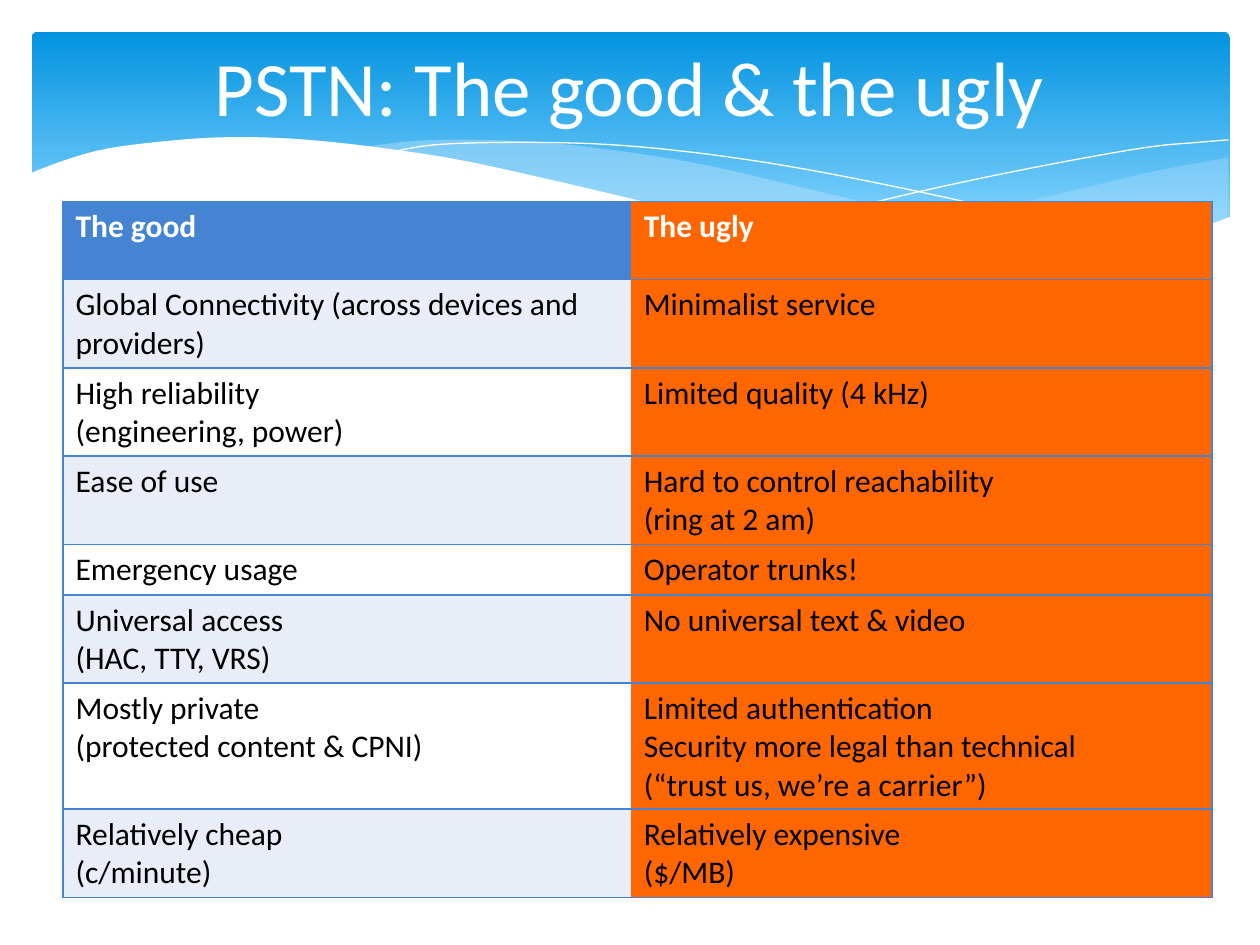
from lxml import etree
from pptx import Presentation
from pptx.dml.color import RGBColor
from pptx.enum.shapes import MSO_SHAPE
from pptx.enum.text import MSO_ANCHOR, PP_ALIGN
from pptx.oxml.ns import qn
from pptx.util import Inches, Pt

ROUND = MSO_SHAPE.ROUNDED_RECTANGLE
MIDDLE = MSO_ANCHOR.MIDDLE
CENTER = PP_ALIGN.CENTER
WHITE = RGBColor(0xFF, 0xFF, 0xFF)
BLACK = RGBColor(0x00, 0x00, 0x00)
DEEP = RGBColor(0x02, 0x93, 0xE0)
SKY = RGBColor(0x83, 0xD3, 0xFE)
MIST = RGBColor(0xC6, 0xE7, 0xFC)
BLUE = RGBColor(0x45, 0x84, 0xD3)
PALE = RGBColor(0xE9, 0xED, 0xF7)
ORANGE = RGBColor(0xFF, 0x66, 0x00)

TITLE = {"name": "Calibri", "size": Pt(44), "bold": False}
HEAD = {"name": "Calibri", "size": Pt(18), "bold": True}
BODY = {"name": "Calibri", "size": Pt(18), "bold": False}

# Each wave is a list of edges in inches from the banner's top left corner.
RIGHT = [
    [(9.5, 1), (8.96, 1.1), (8.36, 1.24), (7.54, 1.43), (6.81, 1.58), (6.36, 1.66)],
    [(6.36, 1.66), (7.07, 1.74), (7.67, 1.78), (8.19, 1.77), (8.64, 1.72),
     (9.1, 1.62), (9.5, 1.48)],
]
BROAD = [
    [(8.68, 1.73), (8.12, 1.65), (7.16, 1.48), (6.04, 1.22), (5.44, 1.08),
     (4.89, 0.98), (4.17, 0.89), (3.55, 0.86), (3.03, 0.87), (2.61, 0.92)],
    [(2.61, 0.92), (3.37, 1.03), (4.24, 1.22), (5.41, 1.49), (6.25, 1.64),
     (6.97, 1.74), (7.6, 1.78), (8.13, 1.78), (8.68, 1.73)],
]
FALL = [[(2.84, 0.96), (3.19, 0.9), (3.76, 0.88), (4.44, 0.89), (5.08, 0.94),
         (5.83, 1.04), (6.7, 1.2), (7.7, 1.42), (8.82, 1.72)]]
RISE = [[(5.88, 1.57), (6.47, 1.41), (7.23, 1.23), (8.11, 1.05), (8.85, 0.92),
         (9.26, 0.88), (9.5, 0.86)]]
FRONT = [
    [(9.52, 1.47), (9.05, 1.63), (8.5, 1.73), (7.84, 1.77), (7.01, 1.73),
     (6.23, 1.62), (5.3, 1.45), (4.22, 1.2), (3.4, 1.02), (2.67, 0.91),
     (2.05, 0.85), (1.52, 0.84), (1.07, 0.87), (0.6, 0.93), (0.27, 1.02), (-0.02, 1.13)],
    [(-0.02, 2.3), (9.52, 2.3)],
]

ROWS = [
    ("The good", "The ugly"),
    ("Global Connectivity (across devices and providers)", "Minimalist service"),
    ("High reliability\n(engineering, power)", "Limited quality (4 kHz)"),
    ("Ease of use", "Hard to control reachability\n(ring at 2 am)"),
    ("Emergency usage", "Operator trunks!"),
    ("Universal access\v(HAC, TTY, VRS)", "No universal text & video"),
    ("Mostly private\n(protected content & CPNI)",
     "Limited authentication\nSecurity more legal than technical\n"
     "(“trust us, we’re a carrier”)"),
    ("Relatively cheap\n(c/minute)", "Relatively expensive\n($/MB)"),
]
LINES = [2, 2, 2, 1, 2, 3, 2]


def write(frame, text, style, color, align=None):
    frame.text = text
    for par in frame.paragraphs:
        par.alignment = align
        for run in par.runs:
            for key, value in style.items():
                setattr(run.font, key, value)
            run.font.color.rgb = color


def smooth(knots, steps=5):
    """Return points on a Catmull-Rom curve through the knots."""
    if len(knots) < 3:
        return knots
    ext = [knots[0], *knots, knots[-1]]
    points = [knots[0]]
    for a, b, c, d in zip(ext, ext[1:], ext[2:], ext[3:]):
        for step in range(1, steps + 1):
            t = step / steps
            points.append(tuple(
                q + t * (r - p) / 2 + t * t * (2 * p - 5 * q + 4 * r - s) / 2
                + t ** 3 * (3 * q - p - 3 * r + s) / 2
                for p, q, r, s in zip(a, b, c, d)))
    return points


def wave(slide, left, top, edges, fill=None, alpha=100):
    """Draw a filled wave, or a white hairline when there is no fill."""
    points = [(left + Inches(x), top + Inches(y))
              for edge in edges for x, y in smooth(edge)]
    pen = slide.shapes.build_freeform(*points[0])
    pen.add_line_segments(points[1:], close=fill is not None)
    shape = pen.convert_to_shape()
    shape.shadow.inherit = False
    if fill is None:
        shape.fill.background()
        shape.line.color.rgb = WHITE
        shape.line.width = Pt(0)
        return
    shape.fill.solid()
    shape.fill.fore_color.rgb = fill
    shape.line.fill.background()
    if alpha < 100:
        color = shape.fill._xPr.find(".//" + qn("a:srgbClr"))
        etree.SubElement(color, qn("a:alpha"), val=str(alpha * 1000))


def banner(slide, left, top, width, height):
    card = slide.shapes.add_shape(ROUND, left, top, width, height)
    card.adjustments[0] = 0.03
    card.shadow.inherit = False
    card.line.fill.background()
    card.fill.gradient()
    card.fill.gradient_angle = 270
    for stop, color, place in zip(card.fill.gradient_stops, (DEEP, SKY), (0, 0.9)):
        stop.color.rgb = color
        stop.position = place
    wave(slide, left, top, RIGHT, MIST, 29)
    wave(slide, left, top, BROAD, MIST, 40)
    wave(slide, left, top, FALL)
    wave(slide, left, top, RISE)
    wave(slide, left, top, FRONT, WHITE)


def title(slide, left, top, width, height):
    frame = slide.shapes.add_textbox(left, top, width, height).text_frame
    frame.word_wrap = True
    frame.vertical_anchor = MIDDLE
    write(frame, "PSTN: The good & the ugly", TITLE, WHITE, CENTER)


def border(cell, bare):
    """Rule every side of the cell but the bare one."""
    props = cell._tc.get_or_add_tcPr()
    for side in "LRTB":
        line = etree.SubElement(props, qn("a:ln" + side), w=str(Pt(1)))
        if side == bare:
            etree.SubElement(line, qn("a:noFill"))
        else:
            fill = etree.SubElement(line, qn("a:solidFill"))
            etree.SubElement(fill, qn("a:srgbClr"), val=str(BLUE))


def table(slide, left, top, width, height):
    grid = slide.shapes.add_table(len(ROWS), 2, left, top, width, height).table
    grid.columns[0].width = Inches(4.51)
    grid.columns[1].width = width - Inches(4.51)
    grid.rows[0].height = Inches(0.62)
    for row, count in enumerate(LINES, 1):
        grid.rows[row].height = Inches(0.1 + 0.3 * count)
    for row, texts in enumerate(ROWS):
        left_fill = BLUE if row == 0 else (WHITE, PALE)[row % 2]
        for col, text in enumerate(texts):
            cell = grid.cell(row, col)
            border(cell, "RL"[col])
            cell.fill.solid()
            cell.fill.fore_color.rgb = (left_fill, ORANGE)[col]
            style, color = (BODY, BLACK) if row else (HEAD, WHITE)
            write(cell.text_frame, text, style, color)


def main():
    deck = Presentation()
    deck.slide_width, deck.slide_height = Inches(10), Inches(7.5)
    slide = deck.slides.add_slide(deck.slide_layouts[6])
    banner(slide, Inches(0.25), Inches(0.25), Inches(9.51), Inches(1.72))
    title(slide, Inches(0.5), Inches(0.25), Inches(9), Inches(0.86))
    table(slide, Inches(0.5), Inches(1.6), Inches(9.12), Inches(5.52))
    deck.save("out.pptx")


if __name__ == "__main__":
    main()
